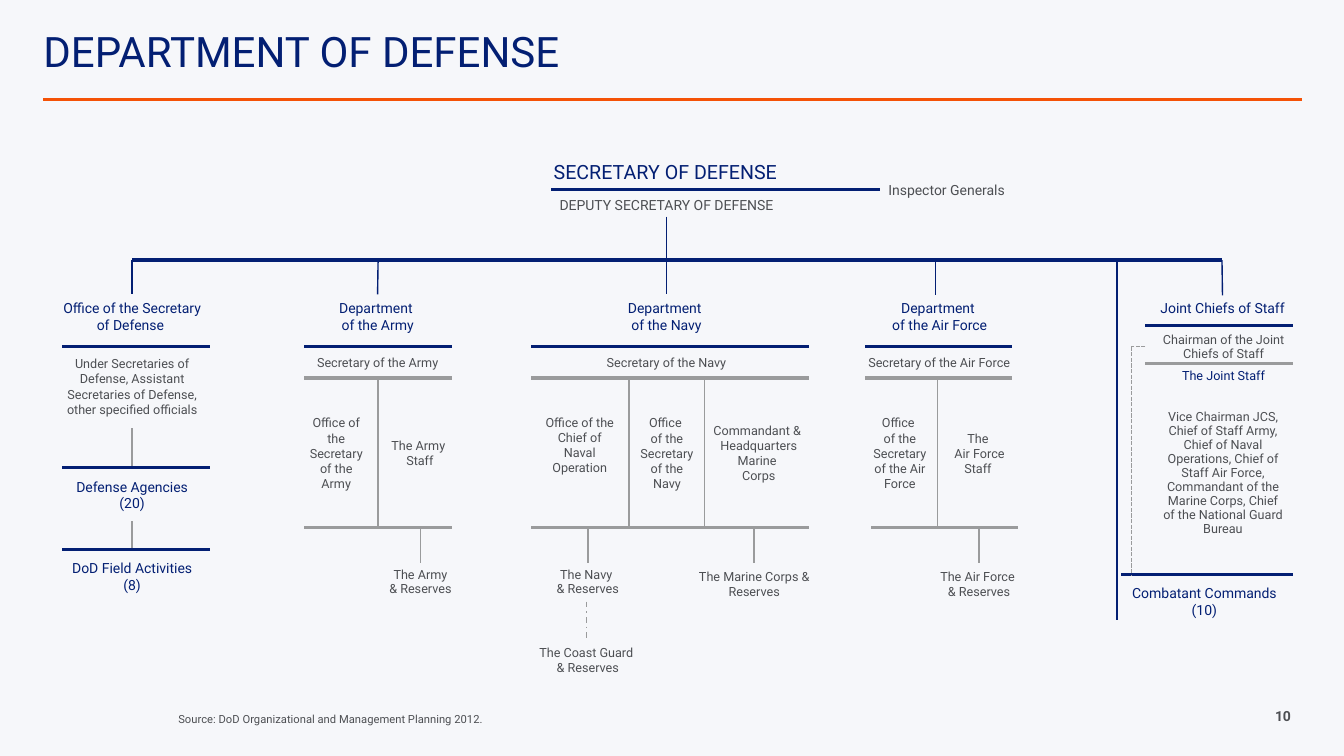
"""Builds the Department of Defense organization chart slide."""
from copy import deepcopy
from pptx import Presentation
from pptx.dml.color import RGBColor
from pptx.enum import dml, shapes, text as txt
from pptx.oxml import ns, xmlchemy
from pptx.util import Inches, Pt

NAVY = RGBColor(0x03, 0x1F, 0x73)
GRAY = RGBColor(0x4D, 0x4F, 0x53)
SILVER = RGBColor(0x9A, 0x9B, 0x9C)
ORANGE = RGBColor(0xF4, 0x52, 0x06)
PALE = RGBColor(0xF6, 0xF7, 0xFA)
MIDDLE, TOP = txt.MSO_ANCHOR.MIDDLE, txt.MSO_ANCHOR.TOP
CENTER, LEFT = txt.PP_ALIGN.CENTER, txt.PP_ALIGN.LEFT

deck = Presentation()
deck.slide_width, deck.slide_height = Inches(13.33), Inches(7.5)
slide = deck.slides.add_slide(deck.slide_layouts[5])
slide.background.fill.solid()
slide.background.fill.fore_color.rgb = PALE


def write(words, at, size=9, color=GRAY, anchor=MIDDLE, align=CENTER,
          space=None, bold=False, wrap=True, box=None):
    box = box or slide.shapes.add_textbox(0, 0, 0, 0)
    box.left, box.top, box.width, box.height = map(Inches, at)
    frame = box.text_frame
    frame.word_wrap, frame.vertical_anchor = wrap, anchor
    frame.auto_size = txt.MSO_AUTO_SIZE.NONE
    para = frame.paragraphs[0]
    para.text = words
    para.alignment, para.line_spacing = align, space
    for run in para.runs:
        font = run.font
        font.name, font.size, font.bold = "Roboto", Pt(size), bold
        font.color.rgb = color
    for gap in para._p.findall(ns.qn("a:br")):
        gap.insert(0, deepcopy(para.runs[0]._r.rPr))
    return box


def rule(x1, y1, x2, y2, color=SILVER, width=1.0, dash=None, start=None, end=None):
    line = slide.shapes.add_connector(
        shapes.MSO_CONNECTOR.STRAIGHT, *map(Inches, (x1, y1, x2, y2)))
    line.line.color.rgb, line.line.width = color, Pt(width)
    if dash:
        line.line.dash_style = dash
    line._element.spPr.append(xmlchemy.OxmlElement("a:effectLst"))
    if start:
        line.begin_connect(start, 2)
    if end:
        line.end_connect(end, 0)


title = write("DEPARTMENT OF DEFENSE", (0.43, 0.05, 12.49, 0.99), size=30, color=NAVY,
              align=LEFT, space=0.8, box=slide.shapes.title)
edge = title.text_frame
edge.margin_left, edge.margin_right = 0, Inches(0.2)
edge.margin_top = edge.margin_bottom = Inches(0.1)
rule(0.43, 0.99, 12.91, 0.99, ORANGE, 2.25)

write("SECRETARY OF DEFENSE", (5.27, 1.51, 2.66, 0.39), size=14, color=NAVY)
deputy = write("DEPUTY SECRETARY OF DEFENSE", (5.28, 1.91, 2.66, 0.24), size=10)
write("Inspector Generals ", (8.58, 1.62, 1.65, 0.52), size=10)
rule(5.47, 1.88, 8.73, 1.88, NAVY, 2.25)
rule(1.31, 2.58, 12.12, 2.58, NAVY, 2.25)
rule(11.08, 2.57, 11.08, 6.15, NAVY)

heads = [
    ("Office of the Secretary of Defense ", (0.52, 2.92, 1.58, 0.44), 1.31),
    ("Department \nof the Army", (2.92, 2.92, 1.65, 0.44), 3.75),
    ("Department \nof the Navy", (5.47, 2.92, 2.28, 0.44), 6.61),
    ("Department \nof the Air Force", (8.59, 2.92, 1.46, 0.44), 9.28),
    ("Joint Chiefs of Staff", (11.35, 2.93, 1.55, 0.25), 12.12),
]
for name, at, x in heads:
    head = write(name, at, size=10, color=NAVY)
    if "Navy" in name:
        rule(x, 2.15, x, 2.92, NAVY, start=deputy, end=head)
    else:
        joined = None if "Air" in name else head
        rule(x, 2.58, x, 2.93, NAVY, end=joined)

officials = write(
    "Under Secretaries of Defense, Assistant Secretaries of Defense, "
    "other specified officials", (0.52, 3.42, 1.58, 0.83))
agency = write("Defense Agencies (20)", (0.52, 4.65, 1.58, 0.52), size=10, color=NAVY)
field = write("DoD Field Activities (8)", (0.52, 5.46, 1.58, 0.52), size=10, color=NAVY)
rule(1.31, 4.25, 1.31, 4.65, start=officials, end=agency)
rule(1.31, 5.17, 1.31, 5.46, start=agency, end=field)
for y in (3.44, 4.64, 5.45):
    rule(0.62, y, 2.08, y, NAVY, 2.25)

for name, left, width in [("Army", 2.92, 1.65), ("Navy", 5.47, 2.28),
                          ("Air Force", 8.48, 1.67)]:
    write("Secretary of the " + name, (left, 3.43, width, 0.34))
for left, right, shift in [(3.02, 4.48, 0), (5.27, 8.02, 0), (8.58, 10.04, 0.06)]:
    rule(left, 3.44, right, 3.44, NAVY, 2.25)
    rule(left, 3.75, right, 3.75, width=2.25)
    rule(left + shift, 5.23, right + shift, 5.23, width=2.25)
for x in (3.75, 6.24, 6.99, 9.3):
    rule(x, 3.76, x, 5.23)

staffs = [
    ("Office of the Secretary of the Army", 2.92, 3.75, 0.83),
    ("The Army \nStaff", 3.75, 3.75, 0.83),
    ("Office of the Chief of Naval Operation", 5.27, 3.67, 0.96),
    ("Office \nof the Secretary of the Navy", 6.21, 3.75, 0.81),
    ("Commandant & \nHeadquarters Marine \nCorps", 6.94, 3.75, 1.17),
    ("Office \nof the Secretary of the Air Force", 8.52, 3.75, 0.81),
    ("The \nAir Force Staff ", 9.33, 3.75, 0.77),
]
for name, left, top, width in staffs:
    write(name, (left, top, width, 1.49))

reserves = [
    ("The Army\n& Reserves", 4.17, 1.46, Pt(10)),
    ("The Navy \n& Reserves", 5.83, 1.11, Pt(10)),
    ("The Marine Corps & Reserves", 7.48, 1.31, None),
    ("The Air Force \n& Reserves", 9.71, 1.07, None),
]
for name, x, width, space in reserves:
    force = write(name, (x - width / 2, 5.59, width, 0.42), anchor=TOP, space=space)
    rule(x, 5.23, x, 5.59, end=force)
write("The Coast Guard \n& Reserves", (5.09, 6.23, 1.48, 0.63))
rule(5.82, 5.97, 5.82, 6.33, dash=dml.MSO_LINE.DASH_DOT)

write("Chairman of the Joint Chiefs of Staff", (11.36, 3.27, 1.55, 0.34), space=Pt(10))
write("The Joint Staff", (11.36, 3.58, 1.55, 0.28), color=NAVY)
write("Vice Chairman JCS, Chief of Staff Army, Chief of Naval Operations, "
      "Chief of Staff Air Force, Commandant of the Marine Corps, "
      "Chief of the National Guard Bureau", (11.43, 3.86, 1.4, 1.67), space=Pt(10))
write("Combatant Commands (10)", (11.12, 5.71, 1.65, 0.52), size=10, color=NAVY)
rule(11.36, 3.23, 12.82, 3.23, NAVY, 2.25)
rule(11.36, 3.61, 12.82, 3.61, width=2.25)
rule(11.12, 5.7, 12.82, 5.7, NAVY, 2.25)
rule(11.36, 3.44, 11.22, 3.44, dash=dml.MSO_LINE.SQUARE_DOT)
rule(11.22, 3.44, 11.22, 5.7, dash=dml.MSO_LINE.SQUARE_DOT)

write("Source: DoD Organizational and Management Planning 2012.",
      (1.67, 7.02, 3.42, 0.23), size=8, anchor=TOP, align=LEFT)
write("10", (12.54, 6.97, 0.37, 0.27), size=10, anchor=TOP, bold=True, wrap=False)

deck.save("out.pptx")
